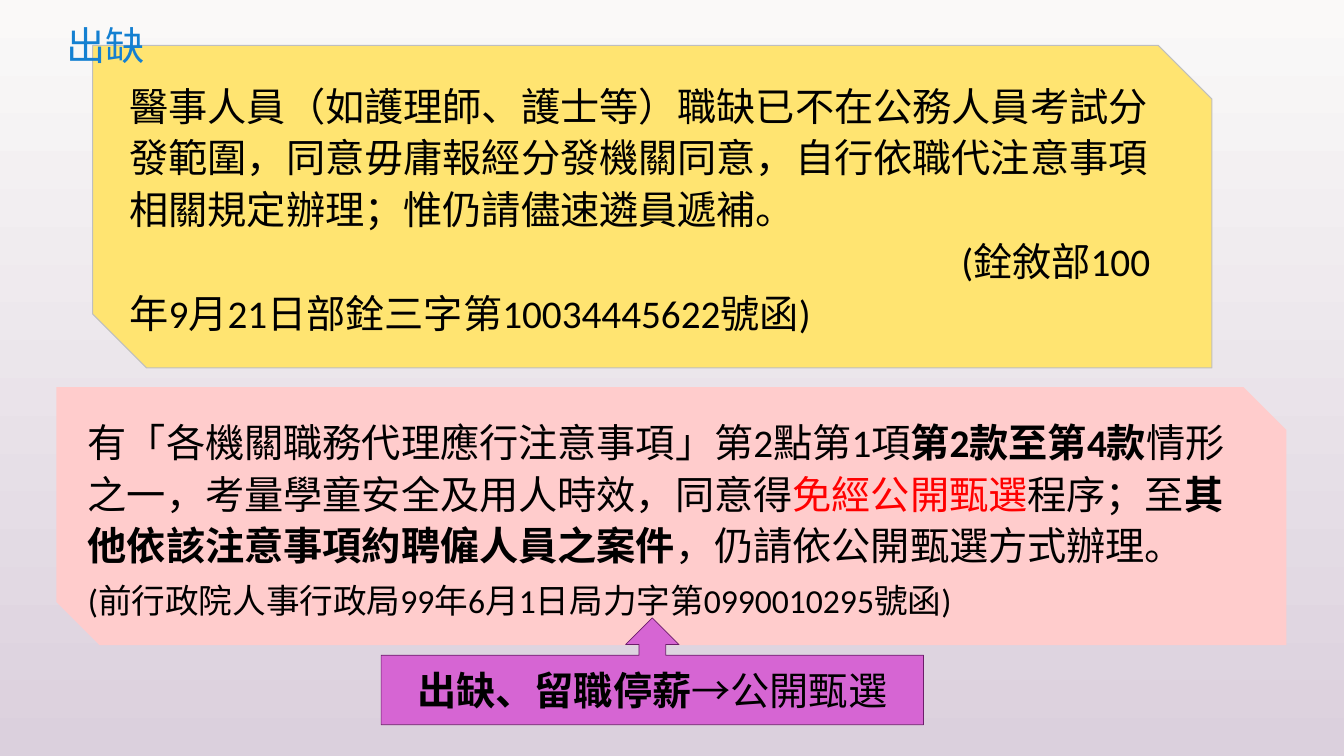
from dataclasses import dataclass
from typing import Optional

from pptx import Presentation
from pptx.dml.color import RGBColor
from pptx.enum.shapes import MSO_SHAPE
from pptx.enum.text import MSO_ANCHOR, MSO_AUTO_SIZE, PP_ALIGN
from pptx.util import Emu, Pt

SNIP = MSO_SHAPE.SNIP_2_DIAG_RECTANGLE
CALLOUT = MSO_SHAPE.UP_ARROW_CALLOUT
TOP, MIDDLE = MSO_ANCHOR.TOP, MSO_ANCHOR.MIDDLE
LEFT, CENTER = PP_ALIGN.LEFT, PP_ALIGN.CENTER
GROW = MSO_AUTO_SIZE.SHAPE_TO_FIT_TEXT
NONE = MSO_AUTO_SIZE.NONE
PX = 9144  # 100 px to the inch


@dataclass
class Run:
    text: str
    bold: bool = False
    color: str = "000000"


@dataclass
class Para:
    runs: list[Run]
    size: int = 28
    indent: int = 0


@dataclass
class Panel:
    kind: MSO_SHAPE
    box: tuple[int, int, int, int]
    fill: str
    paras: list[Para]
    line: Optional[str] = None
    width: float = 0
    anchor: MSO_ANCHOR = TOP
    align: PP_ALIGN = LEFT
    auto: MSO_AUTO_SIZE = GROW
    pitch: Optional[int] = 37


PANELS = [
    Panel(SNIP, (92, 45, 1110, 320), "FFE471", [
        Para([Run("醫事人員（如護理師、護士等）職缺已不在公務人員考試分發範圍，"
                  "同意毋庸報經分發機關同意，自行依職代注意事項相關規定辦理；"
                  "惟仍請儘速遴員遞補。")]),
        Para([Run("(銓敘部100年9月21日部銓三字第10034445622號函)")], indent=825),
    ], "BFBFBF", 0.75),
    Panel(SNIP, (56, 384, 1220, 256), "FFCCCC", [
        Para([
            Run("有「各機關職務代理應行注意事項」第2點第1項"),
            Run("第2款至第4款", bold=True),
            Run("情形之一，考量學童安全及用人時效，同意得"),
            Run("免經公開甄選", color="FF0000"),
            Run("程序；至"),
            Run("其他依該注意事項約聘僱人員之案件", bold=True),
            Run("，仍請依公開甄選方式辦理。"),
        ]),
        Para([Run("(前行政院人事行政局99年6月1日局力字第0990010295號函)")], 24),
    ]),
    Panel(CALLOUT, (378, 613, 538, 106), "D665D3", [
        Para([Run("出缺、留職停薪", bold=True), Run("→公開甄選")]),
    ], "6C1D6A", 0.5, MIDDLE, CENTER, NONE, None),
]


def px(n: int) -> Emu:
    return Emu(n * PX)


def rgb(code: str) -> RGBColor:
    return RGBColor.from_string(code)


def write(frame, paras: list[Para], *, font: str = "Calibri",
          anchor: MSO_ANCHOR = TOP, align: PP_ALIGN = LEFT,
          auto: MSO_AUTO_SIZE = GROW, pitch: Optional[int] = None) -> None:
    frame.word_wrap = True
    frame.auto_size = auto
    frame.vertical_anchor = anchor
    for i, para in enumerate(paras):
        p = frame.add_paragraph() if i else frame.paragraphs[0]
        p.alignment = align
        if pitch:
            p.line_spacing = Pt(pitch)
        if para.indent:
            p._p.get_or_add_pPr().set("indent", str(px(para.indent)))
        for part in para.runs:
            run = p.add_run()
            run.text = part.text
            run.font.name = font
            run.font.size = Pt(para.size)
            run.font.bold = part.bold
            run.font.color.rgb = rgb(part.color)


def draw(slide, panel: Panel) -> None:
    shape = slide.shapes.add_shape(panel.kind, *map(px, panel.box))
    shape.shadow.inherit = False
    shape.fill.solid()
    shape.fill.fore_color.rgb = rgb(panel.fill)
    if panel.line:
        shape.line.color.rgb = rgb(panel.line)
        shape.line.width = Pt(panel.width)
    else:
        shape.line.fill.background()
    write(shape.text_frame, panel.paras, anchor=panel.anchor,
          align=panel.align, auto=panel.auto, pitch=panel.pitch)


def shade(slide, *codes: str) -> None:
    """Fill the background from top to bottom."""
    fill = slide.background.fill
    fill.gradient()
    fill.gradient_angle = 270
    for stop, code in zip(fill.gradient_stops, codes):
        stop.color.rgb = rgb(code)


def main() -> None:
    deck = Presentation()
    deck.slide_width, deck.slide_height = px(1333), px(750)
    slide = deck.slides.add_slide(deck.slide_layouts[6])
    shade(slide, "FAF9F8", "DBD0DD")
    for panel in PANELS:
        draw(slide, panel)
    title = slide.shapes.add_textbox(*map(px, (56, 16, 124, 57)))
    write(title.text_frame, [Para([Run("出缺", color="1480D1")])],
          font="Noto Sans")
    deck.save("out.pptx")


if __name__ == "__main__":
    main()
